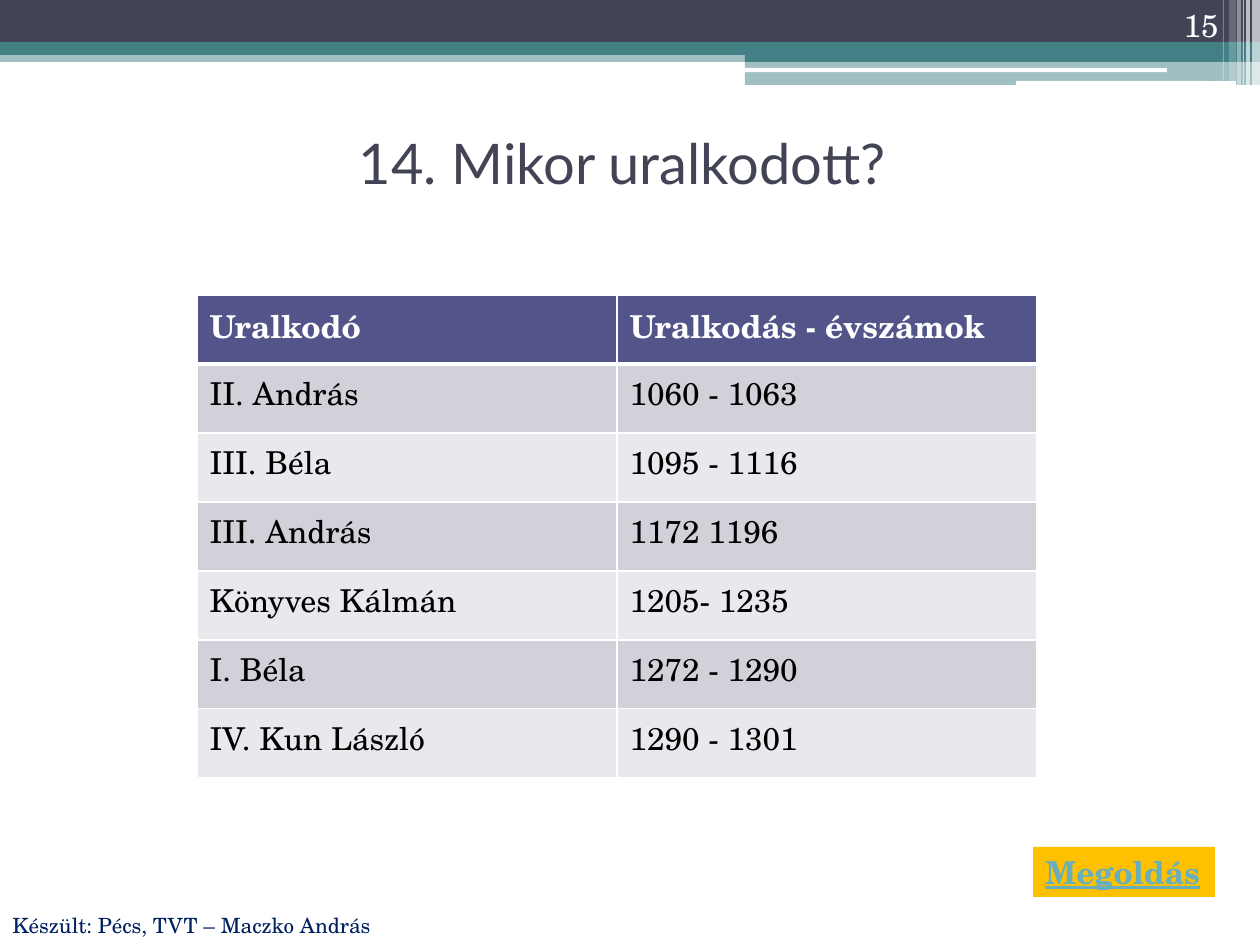
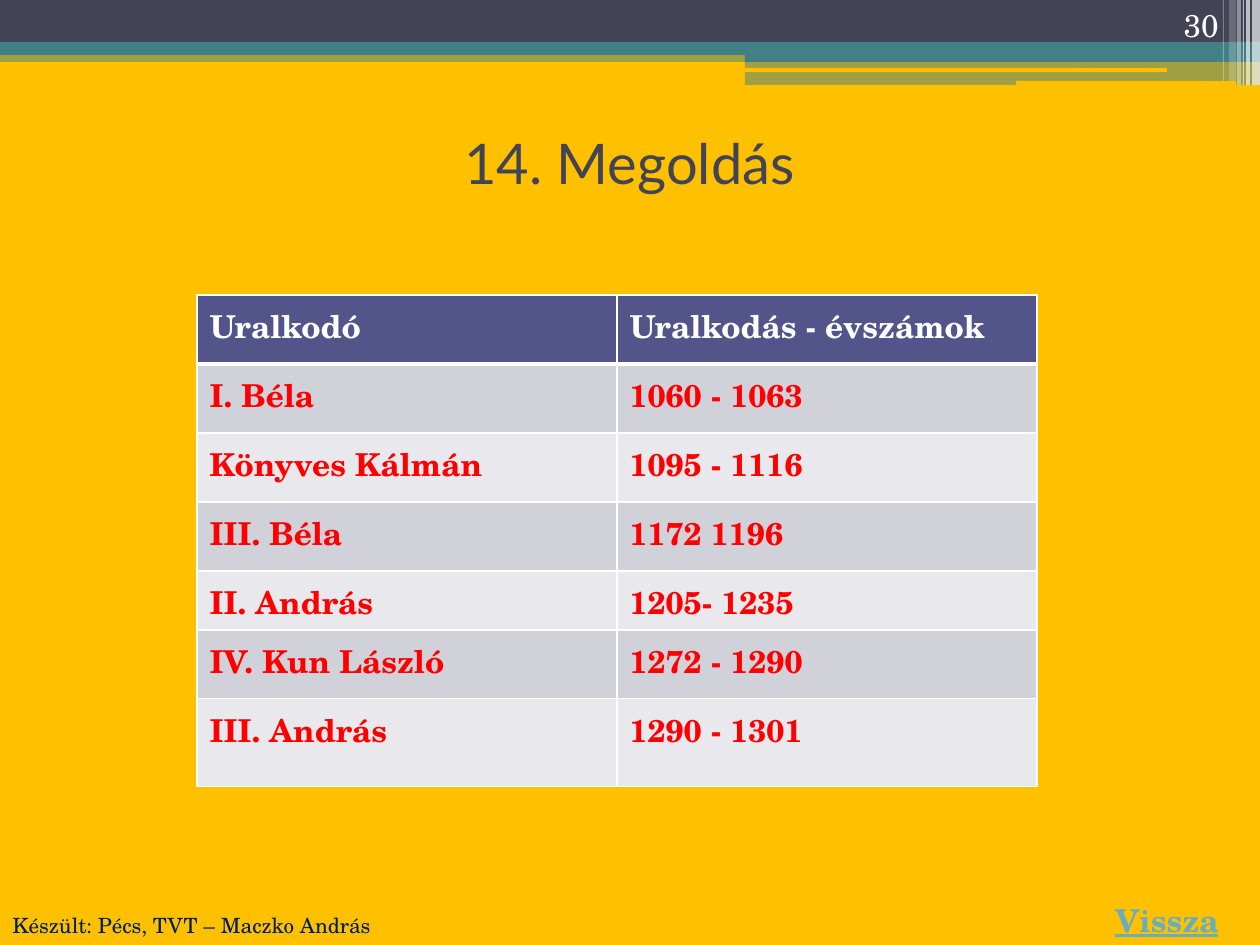
from lxml import etree
from pptx import Presentation
from pptx.dml.color import RGBColor
from pptx.enum.shapes import MSO_SHAPE
from pptx.enum.text import MSO_ANCHOR, PP_ALIGN
from pptx.oxml.ns import qn
from pptx.util import Emu, Pt

RECT, ROUND = MSO_SHAPE.RECTANGLE, MSO_SHAPE.ROUNDED_RECTANGLE
TOP, MIDDLE, BOTTOM = MSO_ANCHOR.TOP, MSO_ANCHOR.MIDDLE, MSO_ANCHOR.BOTTOM
LEFT, CENTER, RIGHT = PP_ALIGN.LEFT, PP_ALIGN.CENTER, PP_ALIGN.RIGHT
EMU_PER_PX = 914400 / 126

WHITE, AMBER, NAVY, TEAL = "FFFFFF", "FFC000", "424456", "438086"
HEADER_FILL, ROW_FILLS = "53548A", ("D1D1DA", "E9E9ED")
BODY_FONT = "TeX Gyre Schola"

# Text formats; the colour is set apart
TITLE = {"name": "Lato", "size": Pt(32)}
BODY = {"name": BODY_FONT, "size": Pt(18), "bold": False}
STRONG = {**BODY, "bold": True}
LINK = {**STRONG, "underline": True}
FOOTER = {"name": BODY_FONT, "size": Pt(12)}

# Top bands: shape, left, top, width, height, colour (None = background), opacity
BANDS = [
    (RECT, 0, 50, 1260, 12, TEAL, 50),
    (RECT, 0, 0, 1260, 43, NAVY, 100),
    (RECT, 0, 42, 1260, 13, TEAL, 100),
    (RECT, 745, 49, 515, 13, TEAL, 100),
    (RECT, 745, 61, 515, 24, TEAL, 50),
    (ROUND, 745, 68, 422, 4, None, 100),
    (ROUND, 1016, 81, 220, 5, None, 100),
    (RECT, 1252, 0, 8, 85, WHITE, 65),
    (RECT, 1246, 0, 4, 85, WHITE, 65),
    (RECT, 1243, 0, 1, 85, WHITE, 60),
    (RECT, 1237, 0, 4, 85, WHITE, 40),
    (RECT, 1229, 0, 7, 81, WHITE, 20),
    (RECT, 1223, 0, 1, 81, WHITE, 30),
]

HEADER = ("Uralkodó", "Uralkodás - évszámok")
REIGNS = ("1060 - 1063", "1095 - 1116", "1172 1196",
          "1205- 1235", "1272 - 1290", "1290 - 1301")
SLIDES = [
    {"background": WHITE, "title": "14. Mikor uralkodott? ", "number": "15",
     "link": "Megoldás", "link_box": (1033, 847, 182, 50),
     "rulers": ("II. András", "III. Béla", "III. András",
                "Könyves Kálmán", "I. Béla", "IV. Kun László"),
     "format": BODY, "color": "000000", "row_heights": [69] * 7},
    {"background": AMBER, "title": "14. Megoldás", "number": "30",
     "link": "Vissza", "link_box": (1103, 895, 130, 50),
     "rulers": ("I. Béla", "Könyves Kálmán", "III. Béla",
                "II. András", "IV. Kun László", "III. András"),
     "format": STRONG, "color": "FF0000",
     "row_heights": [69, 69, 69, 69, 59, 69, 88]},
]


def paint(target, color):
    target.fill.solid()
    target.fill.fore_color.rgb = RGBColor.from_string(color)


def write(frame, text, font_format, color, align=LEFT, anchor=TOP, wrap=True):
    frame.word_wrap = wrap
    frame.vertical_anchor = anchor
    paragraph = frame.paragraphs[0]
    paragraph.alignment = align
    run = paragraph.add_run()
    run.text = text
    for name, value in font_format.items():
        setattr(run.font, name, value)
    run.font.color.rgb = RGBColor.from_string(color)


presentation = Presentation()
presentation.slide_width = Emu(round(1260 * EMU_PER_PX))
presentation.slide_height = Emu(round(945 * EMU_PER_PX))

for content in SLIDES:
    slide = presentation.slides.add_slide(presentation.slide_layouts[6])
    paint(slide.background, content["background"])

    # Top bands
    for kind, *box, color, opacity in BANDS:
        shape = slide.shapes.add_shape(kind, *(Emu(round(n * EMU_PER_PX)) for n in box))
        shape.shadow.inherit = False
        shape.line.fill.background()
        paint(shape, color or content["background"])
        if opacity < 100:
            color_element = shape.fill._xPr.find(qn("a:solidFill"))[0]
            etree.SubElement(color_element, qn("a:alpha"), val=str(opacity * 1000))

    # Title, link, slide number and footer
    texts = [
        (content["title"], (29, 89, 1201, 147), TITLE, NAVY, CENTER, MIDDLE, True),
        (content["link"], content["link_box"], LINK, "67AFBD", LEFT, TOP, False),
        (content["number"], (1126, 0, 105, 50), BODY, WHITE, RIGHT, BOTTOM, True),
        ("Készült: Pécs, TVT – Maczko András", (0, 906, 659, 38), FOOTER,
         "002060", LEFT, TOP, True),
    ]
    for text, box, *style in texts:
        shape = slide.shapes.add_textbox(*(Emu(round(n * EMU_PER_PX)) for n in box))
        write(shape.text_frame, text, *style)
        if text == content["link"]:
            paint(shape, AMBER)

    # Table of rulers and reigns
    rows = [HEADER, *zip(content["rulers"], REIGNS)]
    heights = content["row_heights"]
    table_box = (197, 295, 840, sum(heights))
    table = slide.shapes.add_table(
        len(rows), 2, *(Emu(round(n * EMU_PER_PX)) for n in table_box)).table
    for row_index, row in enumerate(rows):
        table.rows[row_index].height = Emu(round(heights[row_index] * EMU_PER_PX))
        for column_index, text in enumerate(row):
            cell = table.cell(row_index, column_index)
            properties = cell._tc.get_or_add_tcPr()
            for side in ("L", "R", "T", "B"):
                thick = (side, row_index) in (("B", 0), ("T", 1))
                border = etree.SubElement(properties, qn(f"a:ln{side}"),
                                          w=str(Pt(3 if thick else 1)))
                fill = etree.SubElement(border, qn("a:solidFill"))
                etree.SubElement(fill, qn("a:srgbClr"), val=WHITE)
            if row_index == 0:
                paint(cell, HEADER_FILL)
                write(cell.text_frame, text, STRONG, WHITE)
            else:
                paint(cell, ROW_FILLS[(row_index - 1) % 2])
                write(cell.text_frame, text, content["format"], content["color"])

presentation.save("out.pptx")
